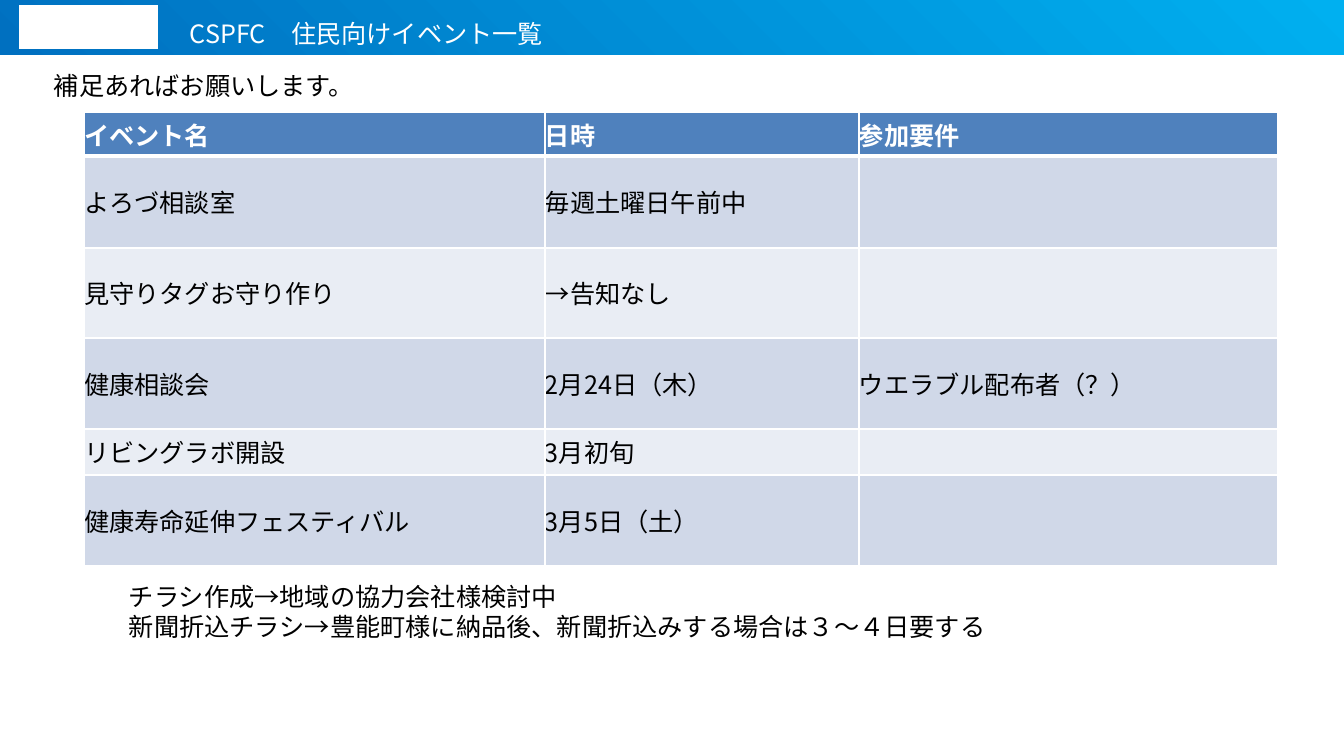
from lxml.etree import SubElement
from pptx import Presentation
from pptx.dml.color import RGBColor
from pptx.enum.shapes import MSO_SHAPE
from pptx.enum.text import MSO_ANCHOR, MSO_AUTO_SIZE
from pptx.oxml.ns import qn
from pptx.util import Pt

WHITE = RGBColor(0xFF, 0xFF, 0xFF)
BLACK = RGBColor(0x00, 0x00, 0x00)
SKY = RGBColor(0x00, 0xB0, 0xF0)
OCEAN = RGBColor(0x00, 0x70, 0xC0)
HEADER_BLUE = RGBColor(0x4F, 0x81, 0xBD)
BANDS = [RGBColor(0xD0, 0xD8, 0xE8), RGBColor(0xE9, 0xED, 0xF4)]
FONT = "Noto Sans CJK JP"

NOTES = [
    ((180, 13, 442, 40), WHITE, ["CSPFC　住民向けイベント一覧"]),
    ((44, 65, 450, 40), BLACK, ["補足あればお願いします。"]),
    ((119, 576, 1007, 71), BLACK, [
        "チラシ作成→地域の協力会社様検討中",
        "新聞折込チラシ→豊能町様に納品後、新聞折込みする場合は３～４日要する",
    ]),
]
EVENTS = [
    ("イベント名", "日時", "参加要件"),
    ("よろづ相談室", "毎週土曜日午前中", ""),
    ("見守りタグお守り作り", "→告知なし", ""),
    ("健康相談会", "2月24日（木）", "ウエラブル配布者（？）"),
    ("リビングラボ開設", "3月初旬", ""),
    ("健康寿命延伸フェスティバル", "3月5日（土）", ""),
]
COLUMN_WIDTHS = [461, 314, 419]
ROW_HEIGHTS = [44, 92, 90, 91, 46, 91]
TABLE_LEFT, TABLE_TOP = 84, 112


def px(length):
    return round(length * 914400 / 100.8)


def set_all(target, values):
    for name, value in values.items():
        setattr(target, name, value)


def write(para, text, color, bold=False):
    span = para.add_run()
    span.text = text
    set_all(span.font, {"size": Pt(18), "name": FONT, "bold": bold})
    span.font.color.rgb = color
    SubElement(span.font._element, qn("a:ea"), typeface=FONT)


def add_rectangle(page, *frame):
    box = page.shapes.add_shape(MSO_SHAPE.RECTANGLE, *map(px, frame))
    box.shadow.inherit = False
    box.line.fill.background()
    return box


def add_note(page, frame, color, lines):
    box = page.shapes.add_textbox(*map(px, frame))
    body = box.text_frame
    set_all(body, {"word_wrap": True, "auto_size": MSO_AUTO_SIZE.SHAPE_TO_FIT_TEXT})
    for index, line in enumerate(lines):
        para = body.add_paragraph() if index else body.paragraphs[0]
        para.line_spacing = Pt(21.6)
        write(para, line, color)


def add_borders(cell, bottom):
    properties = cell._tc.get_or_add_tcPr()
    widths = {"lnL": 1, "lnR": 1, "lnT": 1, "lnB": bottom}
    for index, (side, width) in enumerate(widths.items()):
        edge = SubElement(properties, qn("a:" + side), w=str(Pt(width)))
        properties.insert(index, edge)
        fill = SubElement(edge, qn("a:solidFill"))
        SubElement(fill, qn("a:srgbClr"), val=str(WHITE))


def add_events(page):
    frame = (TABLE_LEFT, TABLE_TOP, sum(COLUMN_WIDTHS), sum(ROW_HEIGHTS))
    table = page.shapes.add_table(
        len(EVENTS), len(COLUMN_WIDTHS), *map(px, frame)).table
    for column, width in zip(table.columns, COLUMN_WIDTHS):
        column.width = px(width)
    for index, (row, height, texts) in enumerate(
            zip(table.rows, ROW_HEIGHTS, EVENTS)):
        row.height = px(height)
        header = index == 0
        for cell, text in zip(row.cells, texts):
            set_all(cell, {
                "margin_left": 0, "margin_right": 0,
                "margin_top": 0, "margin_bottom": 0,
                "vertical_anchor": MSO_ANCHOR.MIDDLE,
            })
            cell.fill.solid()
            cell.fill.fore_color.rgb = HEADER_BLUE if header else BANDS[(index - 1) % 2]
            add_borders(cell, 3 if header else 1)
            if text:
                write(cell.text_frame.paragraphs[0], text,
                      WHITE if header else BLACK, header)


def main():
    deck = Presentation()
    set_all(deck, {"slide_width": px(1344), "slide_height": px(756)})
    page = deck.slides.add_slide(deck.slide_layouts[6])

    banner = add_rectangle(page, 0, 0, 1344, 55)
    banner.fill.gradient()
    banner.fill.gradient_angle = 225
    for stop, color in zip(banner.fill.gradient_stops, (SKY, OCEAN)):
        stop.color.rgb = color

    label = add_rectangle(page, 19, 5, 139, 44)
    label.fill.solid()
    label.fill.fore_color.rgb = WHITE

    for note in NOTES:
        add_note(page, *note)
    add_events(page)
    deck.save("out.pptx")


if __name__ == "__main__":
    main()
